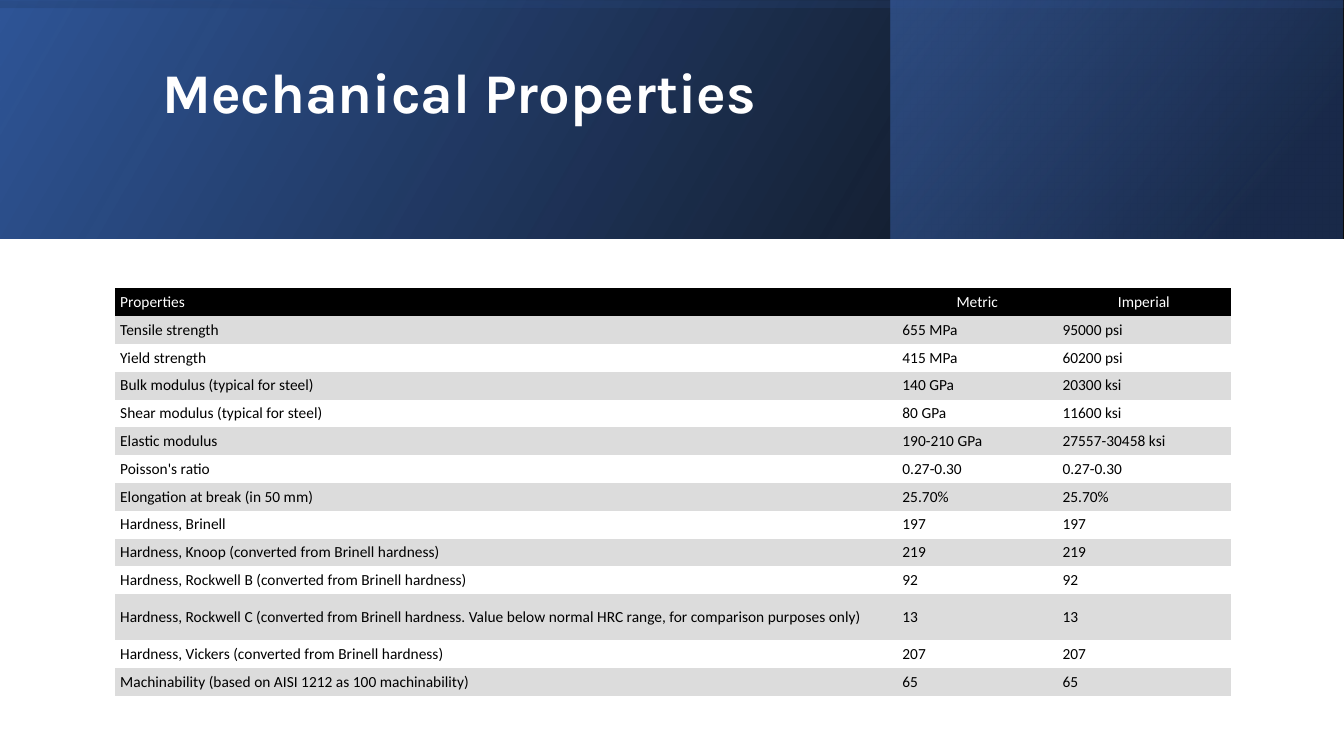
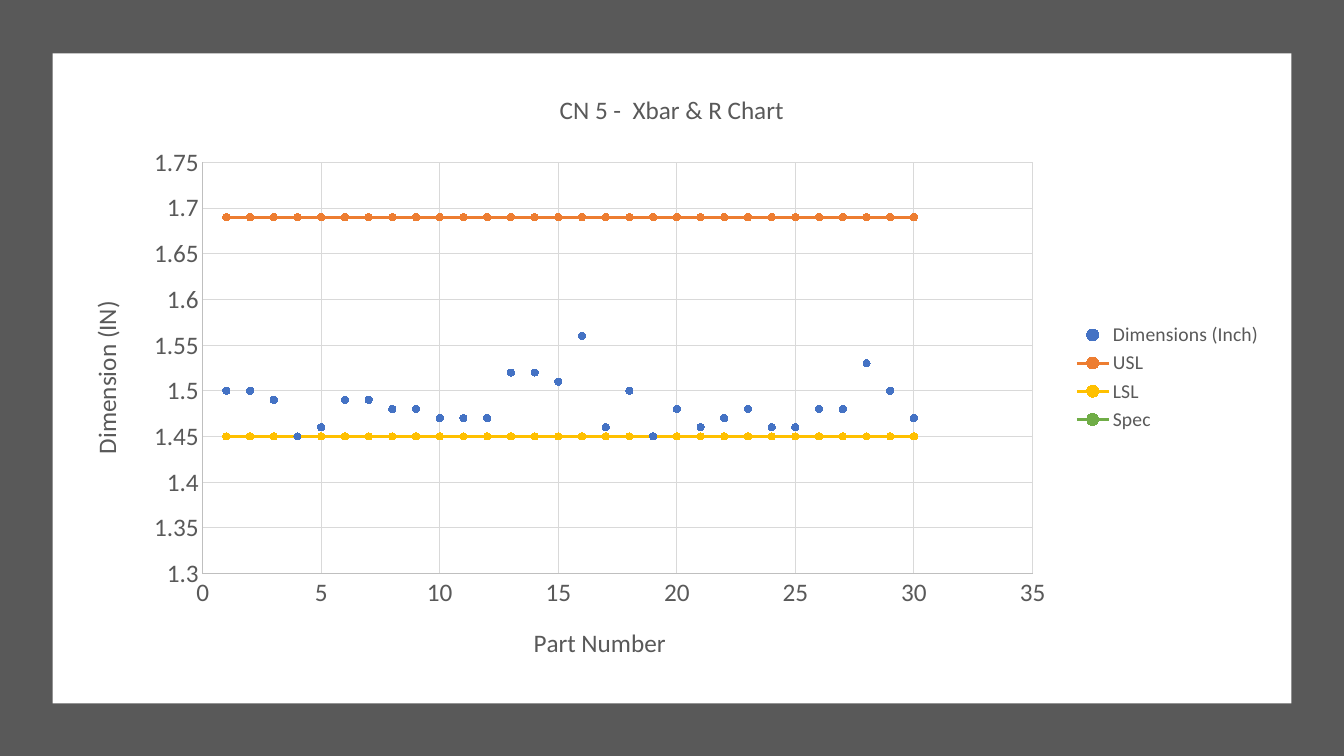
from dataclasses import dataclass

from lxml.etree import SubElement
from pptx import Presentation
from pptx.chart.data import XyChartData
from pptx.dml.color import RGBColor
from pptx.enum.chart import XL_CHART_TYPE, XL_LEGEND_POSITION, XL_MARKER_STYLE, XL_TICK_MARK
from pptx.enum.shapes import MSO_SHAPE
from pptx.enum.text import MSO_ANCHOR, PP_ALIGN
from pptx.oxml import parse_xml
from pptx.oxml.ns import nsdecls, qn
from pptx.util import Emu, Pt

PX = 4762.5
WIDTH, HEIGHT = 2560, 1440
BAND_HEIGHT = 455
NO_TABLE_STYLE = "{2D5ABB26-0587-4C30-8999-92F81FD0307C}"


@dataclass(frozen=True)
class Theme:
    """Colours, fonts and type sizes of the deck."""

    white: str = "FFFFFF"
    black: str = "000000"
    stripe: str = "DCDCDC"
    slate: str = "595959"
    axis: str = "BFBFBF"
    grid: str = "D9D9D9"
    navy: str = "203864"
    royal: str = "2F5597"
    blue: str = "4472C4"
    orange: str = "ED7D31"
    yellow: str = "FFC000"
    green: str = "70AD47"
    title_font: str = "Karla"
    body_font: str = "Calibri"
    title_size: int = 40
    chart_size: int = 18
    legend_size: int = 14
    table_size: int = 11


THEME = Theme()

PROPERTIES = [
    ("Properties", "Metric", "Imperial"),
    ("Tensile strength", "655 MPa", "95000 psi"),
    ("Yield strength", "415 MPa", "60200 psi"),
    ("Bulk modulus (typical for steel)", "140 GPa", "20300 ksi"),
    ("Shear modulus (typical for steel)", "80 GPa", "11600 ksi"),
    ("Elastic modulus", "190-210 GPa", "27557-30458 ksi"),
    ("Poisson's ratio", "0.27-0.30", "0.27-0.30"),
    ("Elongation at break (in 50 mm)", "25.70%", "25.70%"),
    ("Hardness, Brinell", "197", "197"),
    ("Hardness, Knoop (converted from Brinell hardness)", "219", "219"),
    ("Hardness, Rockwell B (converted from Brinell hardness)", "92", "92"),
    ("Hardness, Rockwell C (converted from Brinell hardness. Value below normal HRC range, "
     "for comparison purposes only)", "13", "13"),
    ("Hardness, Vickers (converted from Brinell hardness)", "207", "207"),
    ("Machinability (based on AISI 1212 as 100 machinability)", "65", "65"),
]
ROCKWELL_C_ROW = 11

DIMENSIONS = [
    1.5, 1.5, 1.49, 1.45, 1.46, 1.49, 1.49, 1.48, 1.48, 1.47,
    1.47, 1.47, 1.52, 1.52, 1.51, 1.56, 1.46, 1.5, 1.45, 1.48,
    1.46, 1.47, 1.48, 1.46, 1.46, 1.48, 1.48, 1.53, 1.5, 1.47,
]
PARTS = len(DIMENSIONS)
CONTROL_SERIES = [
    ("Dimensions (Inch)", DIMENSIONS, THEME.blue, False),
    ("USL", [1.69] * PARTS, THEME.orange, True),
    ("LSL", [1.45] * PARTS, THEME.yellow, True),
    ("Spec", [1.45] * PARTS, THEME.green, True),
]


def px(length):
    """Turn whole pixels into EMU."""
    return Emu(round(length * PX))


def rgb(color):
    """Turn a hex string into a colour."""
    return RGBColor.from_string(color)


def set_font(font, size, color, name=THEME.body_font, bold=False):
    """Apply one type style to a font."""
    font.size, font.name, font.bold = Pt(size), name, bold
    font.color.rgb = rgb(color)


def write_text(frame, text, *, size, color, font=THEME.body_font, bold=False,
               align=PP_ALIGN.LEFT, line_spacing=None):
    """Write one formatted paragraph into a text frame."""
    para = frame.paragraphs[0]
    para.alignment = align
    if line_spacing:
        para.line_spacing = line_spacing
    span = para.add_run()
    span.text = text
    set_font(span.font, size, color, font, bold)


class SlideBuilder:
    """Holds the style and the current slide."""

    def __init__(self, deck, theme):
        """Keep the deck and its theme."""
        self.deck, self.theme, self.page = deck, theme, None

    def new_page(self):
        """Start a blank slide."""
        self.page = self.deck.slides.add_slide(self.deck.slide_layouts[6])

    def rectangle(self, left, top, width, height, color=None):
        """Add a borderless rectangle."""
        box = self.page.shapes.add_shape(
            MSO_SHAPE.RECTANGLE, px(left), px(top), px(width), px(height))
        box.shadow.inherit = False
        box.line.fill.background()
        if color:
            box.fill.solid()
            box.fill.fore_color.rgb = rgb(color)
        return box

    def gradient(self, left, top, width, height, stops, angle, rotation=0):
        """Add a mirrored rectangle with a translucent gradient."""
        box = self.rectangle(left, top, width, height)
        box.rotation = rotation
        box.element.spPr.find(qn("a:xfrm")).set("flipH", "1")
        box.fill.gradient()
        box.fill.gradient_angle = 360 - angle
        for stop, (position, color, _) in zip(box.fill.gradient_stops, stops):
            stop.position = position / 100
            stop.color.rgb = rgb(color)
        colors = box.element.spPr.findall(".//" + qn("a:gs") + "/" + qn("a:srgbClr"))
        for node, (_, _, opacity) in zip(colors, stops):
            SubElement(node, qn("a:alpha")).set("val", str(opacity * 1000))

    def title(self, text):
        """Add the slide title."""
        box = self.page.shapes.add_textbox(px(290), px(73), px(2041), px(330))
        frame = box.text_frame
        frame.word_wrap = True
        frame.vertical_anchor = MSO_ANCHOR.MIDDLE
        frame.margin_bottom = px(124)
        write_text(frame, text, size=self.theme.title_size, color=self.theme.white,
                   font=self.theme.title_font, bold=True, line_spacing=0.9)

    def table(self, left, top, widths, heights, rows):
        """Add a striped table with a dark header."""
        theme = self.theme
        holder = self.page.shapes.add_table(
            len(rows), len(widths), px(left), px(top), px(sum(widths)), px(sum(heights)))
        holder.element.find(".//" + qn("a:tableStyleId")).text = NO_TABLE_STYLE
        grid = holder.table
        for column, width in zip(grid.columns, widths):
            column.width = px(width)
        for index, (row, height, texts) in enumerate(zip(grid.rows, heights, rows)):
            row.height = px(height)
            header = index == 0
            fill = theme.black if header else theme.stripe if index % 2 else theme.white
            for number, (cell, text) in enumerate(zip(row.cells, texts)):
                cell.fill.solid()
                cell.fill.fore_color.rgb = rgb(fill)
                cell.vertical_anchor = MSO_ANCHOR.MIDDLE
                cell.margin_left = cell.margin_right = px(10)
                cell.margin_top = cell.margin_bottom = px(4)
                write_text(cell.text_frame, text, size=theme.table_size,
                           color=theme.white if header else theme.black,
                           align=PP_ALIGN.CENTER if header and number else PP_ALIGN.LEFT)

    def style_axis(self, axis, title, low, high, step):
        """Scale and format one chart axis."""
        theme = self.theme
        axis.minimum_scale, axis.maximum_scale, axis.major_unit = low, high, step
        axis.major_tick_mark = axis.minor_tick_mark = XL_TICK_MARK.NONE
        axis.has_major_gridlines = True
        for line, color in ((axis.format.line, theme.axis),
                            (axis.major_gridlines.format.line, theme.grid)):
            line.color.rgb = rgb(color)
            line.width = Pt(0.75)
        axis.tick_labels.number_format = "General"
        axis.tick_labels.number_format_is_linked = False
        set_font(axis.tick_labels.font, theme.chart_size, theme.slate)
        write_text(axis.axis_title.text_frame, title, size=theme.chart_size,
                   color=theme.slate, align=PP_ALIGN.CENTER)

    def place_plot(self, chart, **fractions):
        """Fix the inner plot area as fractions of the chart."""
        sizes = "".join(f'<c:{key} val="{value}"/>' for key, value in fractions.items())
        layout = parse_xml(
            f'<c:layout {nsdecls("c")}><c:manualLayout><c:layoutTarget val="inner"/>'
            f'<c:xMode val="edge"/><c:yMode val="edge"/>{sizes}'
            "</c:manualLayout></c:layout>")
        area = chart.element.find(".//" + qn("c:plotArea"))
        for old in area.findall(qn("c:layout")):
            area.remove(old)
        area.insert(0, layout)

    def scatter(self, left, top, width, height, title, series):
        """Add a control chart with a legend on the right."""
        theme = self.theme
        data = XyChartData()
        for name, values, _, _ in series:
            points = data.add_series(name)
            for part, value in enumerate(values, 1):
                points.add_data_point(part, value)
        chart = self.page.shapes.add_chart(
            XL_CHART_TYPE.XY_SCATTER, px(left), px(top), px(width), px(height), data).chart
        set_font(chart.font, theme.chart_size, theme.slate)
        chart.plots[0].vary_by_categories = False
        for plotted, (_, _, color, joined) in zip(chart.plots[0].series, series):
            line, marker = plotted.format.line, plotted.marker
            line.width = Pt(2)
            if joined:
                line.color.rgb = rgb(color)
            else:
                line.fill.background()
            marker.style, marker.size = XL_MARKER_STYLE.CIRCLE, 5
            marker.format.fill.solid()
            marker.format.fill.fore_color.rgb = rgb(color)
            marker.format.line.color.rgb = rgb(color)
        chart.has_title = True
        write_text(chart.chart_title.text_frame, title, size=theme.chart_size,
                   color=theme.slate, align=PP_ALIGN.CENTER)
        chart.has_legend = True
        chart.legend.position = XL_LEGEND_POSITION.RIGHT
        chart.legend.include_in_layout = False
        set_font(chart.legend.font, theme.legend_size, theme.slate)
        self.style_axis(chart.category_axis, "Part Number", 0, 35, 5)
        self.style_axis(chart.value_axis, "Dimension (IN)", 1.3, 1.75, 0.05)
        self.place_plot(chart, x=0.11, y=0.15, w=0.69, h=0.67)


def properties_page(builder):
    """Build the table of mechanical properties."""
    theme = builder.theme
    builder.new_page()
    builder.gradient(0, 0, WIDTH, BAND_HEIGHT,
                     [(0, theme.black, 96), (100, theme.royal, 100)], 330)
    builder.gradient(1697, 0, 860, BAND_HEIGHT,
                     [(19, theme.navy, 68), (100, theme.blue, 48)], 320)
    offset = (WIDTH - BAND_HEIGHT) // 2
    builder.gradient(offset, -offset, BAND_HEIGHT, WIDTH,
                     [(23, theme.royal, 16), (99, theme.black, 45)], 350, rotation=270)
    builder.title("Mechanical Properties")
    heights = [88 if row == ROCKWELL_C_ROW else 53 for row in range(len(PROPERTIES))]
    builder.table(219, 549, [1490, 305, 330], heights, PROPERTIES)


def control_chart_page(builder):
    """Build the framed control chart."""
    builder.new_page()
    builder.rectangle(0, 0, WIDTH, HEIGHT, builder.theme.slate)
    builder.rectangle(100, 102, 2360, 1238, builder.theme.white)
    builder.scatter(134, 134, 2291, 1169, "CN 5 -  Xbar & R Chart", CONTROL_SERIES)


def main():
    """Build and save the deck."""
    deck = Presentation()
    deck.slide_width, deck.slide_height = px(WIDTH), px(HEIGHT)
    builder = SlideBuilder(deck, THEME)
    properties_page(builder)
    control_chart_page(builder)
    deck.save("out.pptx")


if __name__ == "__main__":
    main()
